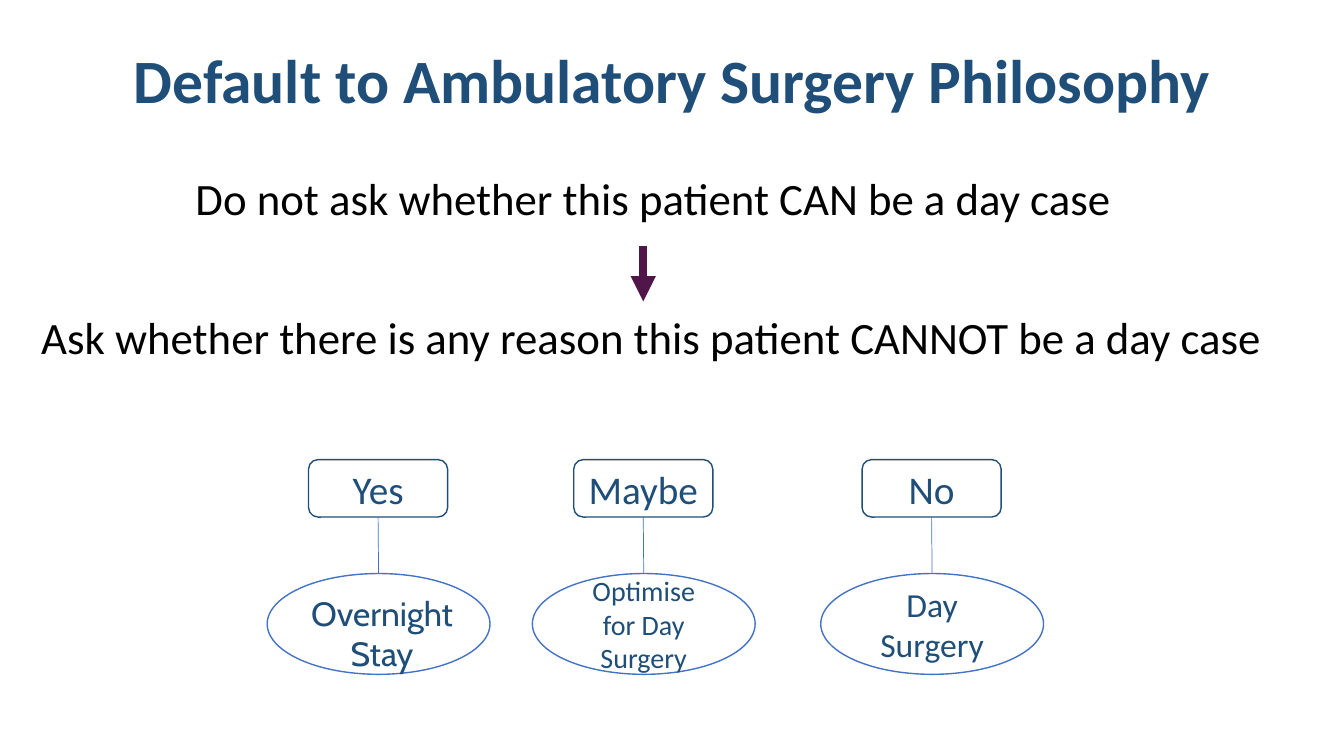
from lxml import etree
from pptx import Presentation
from pptx.dml.color import RGBColor
from pptx.enum.shapes import MSO_CONNECTOR, MSO_SHAPE
from pptx.enum.text import MSO_ANCHOR, PP_ALIGN
from pptx.oxml.ns import qn
from pptx.util import Emu, Pt

STRAIGHT = MSO_CONNECTOR.STRAIGHT
ROUNDED, OVAL = MSO_SHAPE.ROUNDED_RECTANGLE, MSO_SHAPE.OVAL
MIDDLE, TOP = MSO_ANCHOR.MIDDLE, MSO_ANCHOR.TOP
LEFT, CENTER = PP_ALIGN.LEFT, PP_ALIGN.CENTER
PX_PER_INCH = 100
NAVY, BLUE, PLUM, BLACK = "1F4E79", "4472C4", "501649", "000000"
BRANCHES = [
    (265, "Yes", None, 24),
    (528, "Maybe", "Optimise for Day Surgery", 20),
    (814, "No", "Day Surgery", 24),
]


def px(length):
    """Turn whole pixels into EMU."""
    return Emu(length * 914400 // PX_PER_INCH)


def color(hex_string):
    """Turn a hex string into a colour."""
    return RGBColor.from_string(hex_string)


def write(shape, lines, size, hex_string, align=CENTER, anchor=MIDDLE, font="Calibri"):
    """Fill a shape with one styled paragraph per line."""
    frame = shape.text_frame
    frame.word_wrap = True
    frame.vertical_anchor = anchor
    frame.text = "\n".join(lines)
    for para in frame.paragraphs:
        para.alignment = align
        para.font.name = font
        para.font.size = Pt(size)
        para.font.color.rgb = color(hex_string)


def add_label(page, box, lines, size, hex_string, **style):
    """Add a text box."""
    label = page.shapes.add_textbox(*map(px, box))
    write(label, lines, size, hex_string, anchor=TOP, **style)


def add_outline(page, kind, box, hex_string):
    """Add an unfilled preset shape."""
    shape = page.shapes.add_shape(kind, *map(px, box))
    shape.shadow.inherit = False
    shape.fill.background()
    shape.line.color.rgb = color(hex_string)
    shape.line.width = Pt(1)
    return shape


def add_line(page, start, end, hex_string, width):
    """Add a straight line without a shadow."""
    line = page.shapes.add_connector(STRAIGHT, *map(px, start + end))
    line.line.color.rgb = color(hex_string)
    line.line.width = Pt(width)
    etree.SubElement(line._element.spPr, qn("a:effectLst"))
    return line


def add_title(page, box):
    """Place and format the title."""
    title = page.shapes.title
    title.left, title.top, title.width, title.height = map(px, box)
    write(title, ["Default to Ambulatory Surgery Philosophy"], 44, NAVY)
    para = title.text_frame.paragraphs[0]
    para.font.bold = True
    para.line_spacing = 0.9


def add_questions(page, box):
    """Place the two questions and the arrow between them."""
    left, top, width, height = box
    add_label(page, (left + 153, top, 1008, 64),
              ["Do not ask whether this patient CAN be a day case"], 32, BLACK, align=LEFT)
    add_label(page, (left, top + height - 64, width, 64),
              ["Ask whether there is any reason this patient CANNOT be a day case"],
              32, BLACK, align=LEFT)
    arrow = add_line(page, (left + 607, top + 80), (left + 607, top + 135), PLUM, 6)
    etree.SubElement(arrow.line._get_or_add_ln(), qn("a:tailEnd"), type="triangle")


def add_branch(page, box, answer, outcome, size):
    """Place an answer above its outcome and join them."""
    left, top, width, height = box
    reply = add_outline(page, ROUNDED, (left + (width - 138) // 2, top, 138, 57), NAVY)
    write(reply, [answer], 28, NAVY)
    oval = add_outline(page, OVAL, (left, top + height - 100, width, 100), BLUE)
    if outcome:
        oval.text_frame.margin_left = oval.text_frame.margin_right = px(14)
        write(oval, [outcome], size, NAVY)
    else:
        add_label(page, (left + 11, top + 127, 206, 91), ["Overnight", "Stay"],
                  size, NAVY, font="Cabin")
    middle = left + width // 2
    link = add_line(page, (middle, top + 57), (middle, top + height - 100), BLUE, 0.5)
    link.begin_connect(reply, 2)
    link.end_connect(oval, 0)


def main():
    """Build and save the deck."""
    deck = Presentation()
    deck.slide_width, deck.slide_height = px(1333), px(750)
    page = deck.slides.add_slide(deck.slide_layouts[5])
    add_title(page, (92, 40, 1150, 85))
    add_questions(page, (31, 164, 1272, 202))
    for left, answer, outcome, size in BRANCHES:
        add_branch(page, (left, 456, 221, 213), answer, outcome, size)
    deck.save("out.pptx")


if __name__ == "__main__":
    main()
